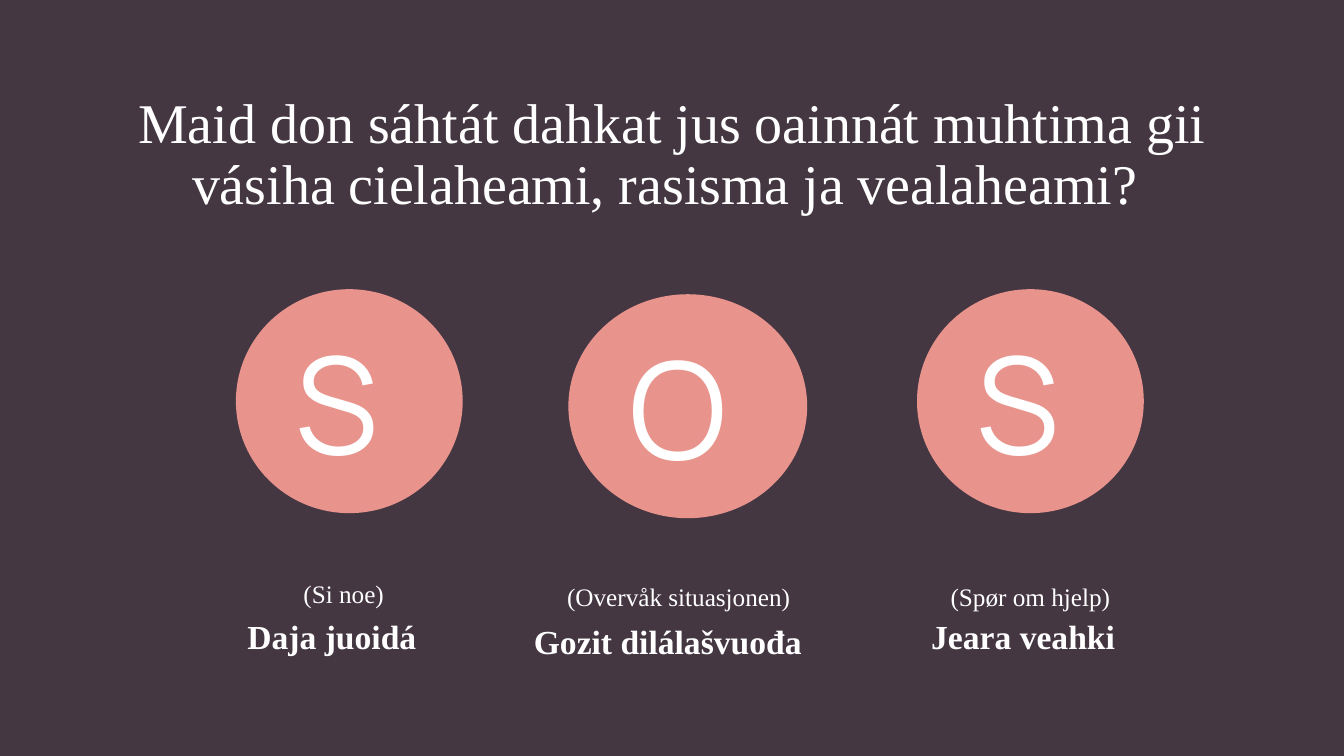
from pptx import Presentation
from pptx.dml.color import RGBColor
from pptx.enum.shapes import MSO_SHAPE as Shape
from pptx.enum.text import MSO_ANCHOR as Anchor, MSO_AUTO_SIZE as Fit, PP_ALIGN as Align
from pptx.oxml import parse_xml
from pptx.util import Pt

COLORS = {"back": "443742", "disc": "E8938C", "text": "FFFFFF"}
SERIF, SANS = "Times New Roman", "Manrope"
NO_BULLET = '<a:buNone xmlns:a="http://schemas.openxmlformats.org/drawingml/2006/main"/>'


def color(name):
    return RGBColor.from_string(COLORS[name])


def place(item, box):
    item.left, item.top, item.width, item.height = map(Pt, box)


def write(item, text, size, font=SERIF, bold=False, align=Align.CENTER,
          anchor=Anchor.TOP, line=None, before=None, left=7.2):
    frame = item.text_frame
    frame.word_wrap = True
    frame.auto_size = Fit.NONE
    frame.vertical_anchor = anchor
    frame.margin_left = Pt(left)
    para = frame.paragraphs[0]
    para.alignment = align
    if line:
        para.line_spacing = line
    if before:
        para.space_before = Pt(before)
    run = para.add_run()
    run.text = text
    run.font.size = Pt(size)
    run.font.name = font
    run.font.bold = bold
    run.font.color.rgb = color("text")


def add_head(slide, box):
    title = slide.shapes.title
    place(title, box)
    write(title, "Maid don sáhtát dahkat jus oainnát muhtima gii "
          "vásiha cielaheami, rasisma ja vealaheami? ",
          40, anchor=Anchor.MIDDLE, line=0.9)


def add_disc(slide, box, letter):
    disc = slide.shapes.add_shape(Shape.OVAL, *map(Pt, box))
    disc.shadow.inherit = False
    disc.fill.solid()
    disc.fill.fore_color.rgb = color("disc")
    disc.line.fill.background()
    write(disc, letter, 96, SANS, align=Align.LEFT, anchor=Anchor.MIDDLE, left=19)


def add_step(slide, box, letter, note, label, body=None):
    """Disc in the box, with note and label below; each is (text, shift, width)."""
    left, top, width, height = box
    mid, base = left + width / 2, top + height
    add_disc(slide, box, letter)

    text, shift, wide = note
    area = (mid + shift - wide / 2, 412, wide, 58)
    if body:
        place(body, area)
        write(body, text, 18, line=0.9, before=10)
        props = body.text_frame.paragraphs[0]._p.get_or_add_pPr()
        props.set("marL", "0")
        props.set("indent", "0")
        props.append(parse_xml(NO_BULLET))
    else:
        write(slide.shapes.add_textbox(*map(Pt, area)), text, 18)

    text, shift, wide = label
    area = (mid + shift - wide / 2, base + 69.5, wide, 36)
    write(slide.shapes.add_textbox(*map(Pt, area)), text, 24, bold=True)


def main():
    deck = Presentation()
    deck.slide_width, deck.slide_height = Pt(960), Pt(540)
    slide = deck.slides.add_slide(deck.slide_layouts[1])
    slide.background.fill.solid()
    slide.background.fill.fore_color.rgb = color("back")
    add_head(slide, (66, 59, 828, 104.4))
    add_step(slide, (168.5, 206.6, 162, 160), "S", ("(Si noe)", -4, 255),
             ("Daja juoidá ", -9.5, 480), slide.placeholders[1])
    add_step(slide, (406, 210.2, 170.6, 160), "O", ("(Overvåk situasjonen)", -6.5, 255),
             ("Gozit dilálašvuođa ", -11.3, 480))
    add_step(slide, (655, 206.6, 162, 160), "S", ("(Spør om hjelp)", 0, 212),
             ("Jeara veahki", -5.2, 282))
    deck.save("out.pptx")


if __name__ == "__main__":
    main()
